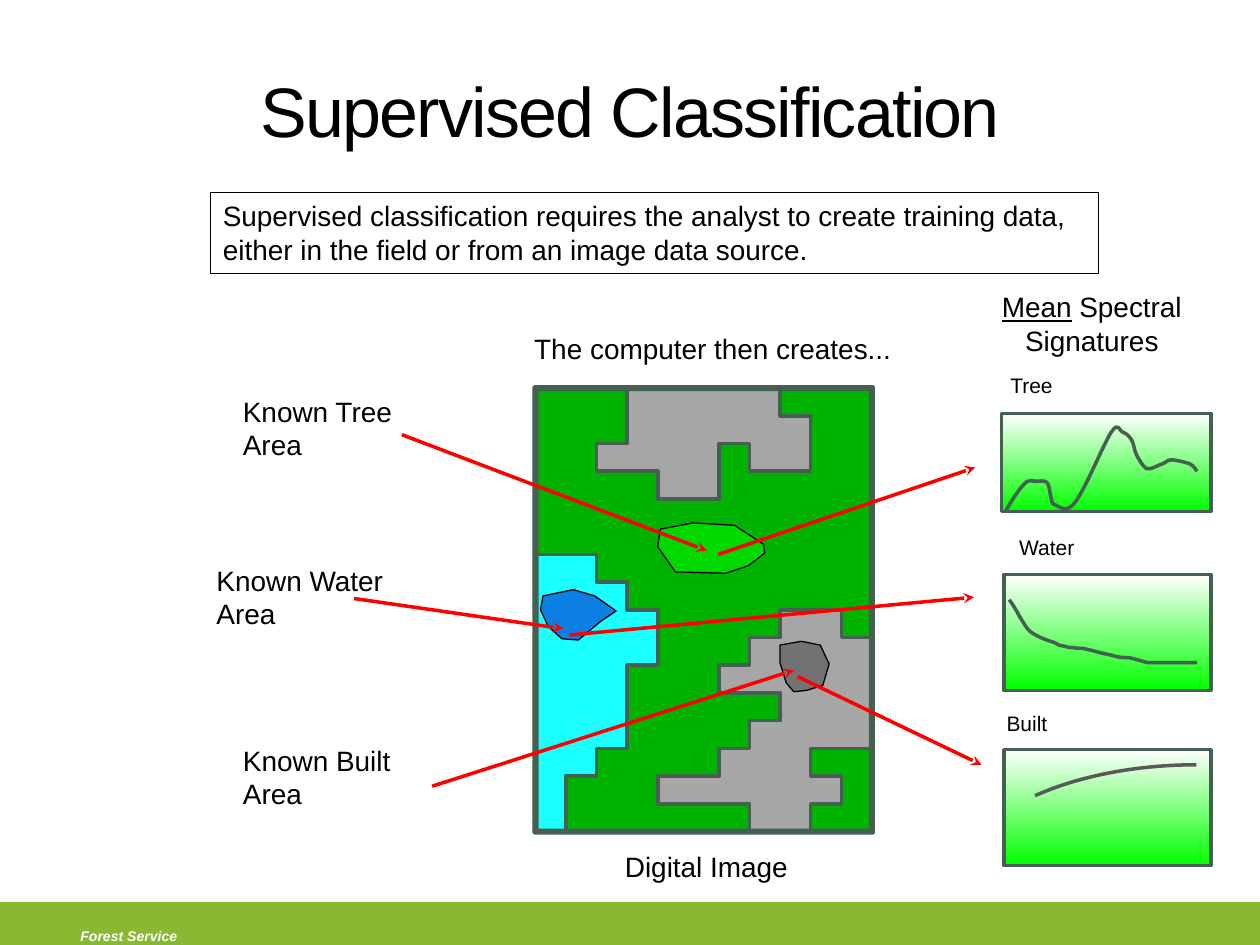
from pptx import Presentation
from pptx.dml.color import RGBColor
from pptx.enum.shapes import MSO_CONNECTOR, MSO_SHAPE
from pptx.enum.text import MSO_ANCHOR, PP_ALIGN
from pptx.oxml.ns import qn
from pptx.util import Inches, Pt
from lxml import etree

RECTANGLE, ARC = MSO_SHAPE.RECTANGLE, MSO_SHAPE.ARC
STRAIGHT = MSO_CONNECTOR.STRAIGHT
LEFT, CENTER = PP_ALIGN.LEFT, PP_ALIGN.CENTER
TOP, MIDDLE = MSO_ANCHOR.TOP, MSO_ANCHOR.MIDDLE

BLACK = RGBColor(0x00, 0x00, 0x00)
WHITE = RGBColor(0xFF, 0xFF, 0xFF)
RED = RGBColor(0xFF, 0x00, 0x00)
FOOTER_GREEN = RGBColor(0x8A, 0xB8, 0x33)
FOREST = RGBColor(0x00, 0xB3, 0x00)
LIME = RGBColor(0x00, 0xFF, 0x00)
CYAN = RGBColor(0x1A, 0xFF, 0xFF)
GRAY = RGBColor(0xA6, 0xA6, 0xA6)
DARK_GRAY = RGBColor(0x40, 0x40, 0x40)
ARC_GRAY = RGBColor(0x59, 0x59, 0x59)
NAVY = RGBColor(0x00, 0x00, 0xCC)
OUTLINE = RGBColor(0x45, 0x5F, 0x51)

# Land cover map: outlines in (column, row) cells of an 11 by 16 grid
MAP_LEFT, MAP_TOP, MAP_WIDTH, MAP_HEIGHT = 4.25, 3.08, 2.67, 3.52
COLUMNS, ROWS = 11, 16
REGIONS = [
    (CYAN, [(0, 6), (2, 6), (2, 7), (3, 7), (3, 8), (4, 8), (4, 10), (3, 10),
            (3, 13), (2, 13), (2, 14), (1, 14), (1, 16), (0, 16)]),
    (GRAY, [(3, 0), (3, 2), (2, 2), (2, 3), (4, 3), (4, 4), (6, 4), (6, 2),
            (7, 2), (7, 3), (9, 3), (9, 1), (8, 1), (8, 0)]),
    (GRAY, [(11, 9), (10, 9), (10, 8), (8, 8), (8, 9), (7, 9), (7, 10),
            (6, 10), (6, 11), (8, 11), (8, 12), (7, 12), (7, 13), (6, 13),
            (6, 14), (4, 14), (4, 15), (7, 15), (7, 16), (9, 16), (9, 15),
            (10, 15), (10, 14), (9, 14), (9, 13), (11, 13)]),
]
MAP_FRAME = [
    [(4.25, 6.59), (6.91, 6.59), (6.91, 3.09), (4.25, 3.09), (4.25, 3.07),
     (6.93, 3.07), (6.93, 6.61), (4.24, 6.61), (4.24, 6.6)],
    [(4.26, 3.08), (4.26, 6.6), (4.24, 6.6), (4.24, 3.07), (4.25, 3.07)],
]

# Training areas: colour, outline, label, label box, arrow from label
TRAINING_AREAS = [
    (DARK_GRAY, [(6.58, 5.27), (6.51, 5.12), (6.36, 5.09), (6.19, 5.12),
                 (6.19, 5.26), (6.24, 5.42), (6.3, 5.49), (6.4, 5.48),
                 (6.53, 5.44)],
     "Known Built Area", (1.83, 5.85, 1.78, 0.64), (3.43, 6.24, 6.3, 5.32)),
    (NAVY, [(4.89, 4.85), (4.72, 4.73), (4.55, 4.68), (4.31, 4.73),
            (4.29, 4.84), (4.35, 4.97), (4.46, 5.07), (4.59, 5.08),
            (4.77, 4.93)],
     "Known Water Area", (1.62, 4.42, 1.53, 0.64), (2.81, 4.75, 4.47, 4.99)),
    (LIME, [(6.06, 4.32), (5.83, 4.17), (5.5, 4.15), (5.24, 4.2),
            (5.22, 4.34), (5.36, 4.54), (5.76, 4.55), (5.94, 4.49),
            (6.07, 4.39)],
     "Known Tree Area", (1.83, 3.08, 1.53, 0.64), (3.19, 3.45, 5.61, 4.37)),
]

# Signature curves: a start point, then two control points and an end each
WATER_CURVE = [
    (8.01, 4.76), (8.04, 4.8), (8.07, 4.85), (8.09, 4.89),
    (8.11, 4.92), (8.12, 4.94), (8.14, 4.97), (8.16, 5), (8.18, 5.02), (8.22, 5.04),
    (8.25, 5.06), (8.33, 5.09), (8.37, 5.1), (8.4, 5.12), (8.42, 5.13), (8.45, 5.13),
    (8.47, 5.14), (8.49, 5.14), (8.51, 5.14), (8.54, 5.15), (8.55, 5.14), (8.61, 5.15),
    (8.66, 5.16), (8.76, 5.19), (8.82, 5.2), (8.88, 5.22), (8.91, 5.22), (8.96, 5.22),
    (9.01, 5.23), (9.07, 5.25), (9.11, 5.26), (9.2, 5.26), (9.4, 5.26), (9.5, 5.26)]
TREE_CURVE = [
    (7.98, 4.06), (8.03, 3.97), (8.09, 3.88), (8.13, 3.84),
    (8.17, 3.8), (8.19, 3.82), (8.22, 3.82), (8.25, 3.82), (8.29, 3.81), (8.31, 3.83),
    (8.33, 3.85), (8.33, 3.91), (8.34, 3.94), (8.35, 3.97), (8.34, 4), (8.38, 4.01),
    (8.41, 4.02), (8.46, 4.08), (8.53, 3.99), (8.61, 3.89), (8.76, 3.52), (8.82, 3.43),
    (8.88, 3.34), (8.88, 3.42), (8.91, 3.43), (8.94, 3.44), (8.96, 3.46), (8.98, 3.49),
    (9, 3.52), (9, 3.57), (9.02, 3.61), (9.04, 3.65), (9.07, 3.7), (9.1, 3.72),
    (9.14, 3.73), (9.19, 3.69), (9.23, 3.68), (9.26, 3.67), (9.26, 3.65), (9.3, 3.65),
    (9.33, 3.65), (9.41, 3.67), (9.44, 3.68), (9.48, 3.7), (9.49, 3.73), (9.5, 3.74)]

# Signature panels: label, label box, panel box, curve, arrow to panel
SIGNATURES = [
    ("Water", (7.99, 4.19, 1.11, 0.3), (7.97, 4.56, 1.64, 0.92), WATER_CURVE,
     (4.52, 5.04, 7.73, 4.74)),
    ("Tree", (7.92, 2.91, 1.11, 0.3), (7.95, 3.28, 1.66, 0.78), TREE_CURVE,
     (5.7, 4.4, 7.74, 3.71)),
    ("Built", (7.89, 5.59, 1.23, 0.3), (7.97, 5.95, 1.64, 0.92), None,
     (6.33, 5.37, 7.79, 6.07)),
]
BUILT_ARC = (7.56, 6.07, 3.87, 1.96)

presentation = Presentation()
presentation.slide_width, presentation.slide_height = Inches(10), Inches(7.5)
slide = presentation.slides.add_slide(presentation.slide_layouts[6])
shapes = slide.shapes


def style(shape, fill, line, width, alpha=None):
    shape.shadow.inherit = False
    if fill is None:
        shape.fill.background()
    else:
        shape.fill.solid()
        shape.fill.fore_color.rgb = fill
        if alpha:
            color = shape._element.spPr.find(qn("a:solidFill"))[0]
            etree.SubElement(color, qn("a:alpha")).set("val", str(alpha * 1000))
    shape.line.color.rgb = line
    shape.line.width = Pt(width)


def add_preset(kind, box, fill, line, width):
    shape = shapes.add_shape(kind, *map(Inches, box))
    style(shape, fill, line, width)
    return shape


def add_outline(points, closed=True):
    start, *rest = [(Inches(x), Inches(y)) for x, y in points]
    builder = shapes.build_freeform(*start, scale=1.0)
    builder.add_line_segments(rest, close=closed)
    return builder.convert_to_shape()


def add_curve(points):
    shape = add_outline(points, closed=False)
    outline = shape._element.spPr.find(".//" + qn("a:path"))
    lines = outline.findall(qn("a:lnTo"))
    for first in range(0, len(lines), 3):
        bezier = etree.SubElement(outline, qn("a:cubicBezTo"))
        for line in lines[first:first + 3]:
            bezier.append(line[0])
            outline.remove(line)
    style(shape, None, OUTLINE, 2)


def add_arrow(ends):
    connector = shapes.add_connector(STRAIGHT, *map(Inches, ends))
    connector.line.color.rgb = RED
    connector.line.width = Pt(2)
    properties = connector._element.spPr
    etree.SubElement(properties.find(qn("a:ln")), qn("a:tailEnd")).set("type", "stealth")
    etree.SubElement(properties, qn("a:effectLst"))


def write(shape, text, size, color=BLACK, align=LEFT, anchor=TOP):
    frame = shape.text_frame
    frame.word_wrap, frame.vertical_anchor = True, anchor
    paragraph = frame.paragraphs[0]
    paragraph.text = text
    paragraph.alignment = align
    font = paragraph.font
    font.name, font.size, font.color.rgb = "Arial", Pt(size), color
    return paragraph


def add_text(box, *args, **options):
    return write(shapes.add_textbox(*map(Inches, box)), *args, **options)


def add_caption(box, text):
    shape = shapes.add_textbox(*map(Inches, box))
    write(shape, text, 16)
    frame = shape.text_frame
    frame.word_wrap = False
    frame.margin_left = frame.margin_right = frame.margin_top = frame.margin_bottom = 0


# Footer, title and introduction
add_preset(RECTANGLE, (0, 7.17, 10, 0.36), FOOTER_GREEN, FOOTER_GREEN, 2.08)
footer = add_text((0.54, 7.31, 2.04, 0.24), "Forest Service", 8, WHITE)
footer.font.bold = footer.font.italic = True
title = add_text((0.5, 0.33, 9, 1.08), "Supervised Classification", 40,
                 align=CENTER, anchor=MIDDLE)
title.runs[0].font._element.set("spc", "-100")
introduction = add_preset(RECTANGLE, (1.67, 1.53, 7.05, 0.64), None, BLACK, 0.75)
write(introduction, "Supervised classification requires the analyst to create training data, "
      "either in the field or from an image data source.", 16)

# Land cover map
add_preset(RECTANGLE, (MAP_LEFT, MAP_TOP, MAP_WIDTH, MAP_HEIGHT), FOREST, OUTLINE, 2)
for fill, cells in REGIONS:
    corners = [(MAP_LEFT + column * MAP_WIDTH / COLUMNS, MAP_TOP + row * MAP_HEIGHT / ROWS)
               for column, row in cells]
    style(add_outline(corners), fill, OUTLINE, 2)
for points in MAP_FRAME:
    style(add_outline(points), BLACK, OUTLINE, 2)

# Captions
add_caption((4.96, 6.74, 1.31, 0.27), "Digital Image")
add_caption((4.24, 2.63, 2.87, 0.27), "The computer then creates...")
heading = add_text((7.72, 2.25, 1.89, 0.64), "Mean", 16, align=CENTER)
heading.runs[0].font.underline = True
heading.add_run().text = " Spectral Signatures"

# Training areas
for fill, points, label, label_box, arrow in TRAINING_AREAS:
    style(add_outline(points), fill, BLACK, 0.75, alpha=50)
    add_text(label_box, label, 16)
    add_arrow(arrow)

# Spectral signatures
for label, label_box, panel_box, curve, arrow in SIGNATURES:
    panel = add_preset(RECTANGLE, panel_box, WHITE, OUTLINE, 2)
    panel.fill.gradient()
    panel.fill.gradient_angle = 270
    for stop, position, color in zip(panel.fill.gradient_stops, (0, 1), (WHITE, LIME)):
        stop.position, stop.color.rgb = position, color
    if curve:
        add_curve(curve)
    add_text(label_box, label, 12)
    add_arrow(arrow)
built_arc = add_preset(ARC, BUILT_ARC, None, ARC_GRAY, 2)
built_arc.adjustments[0], built_arc.adjustments[1] = 162, 198.08
built_arc._element.spPr.xfrm.set("flipH", "1")

presentation.save("out.pptx")
